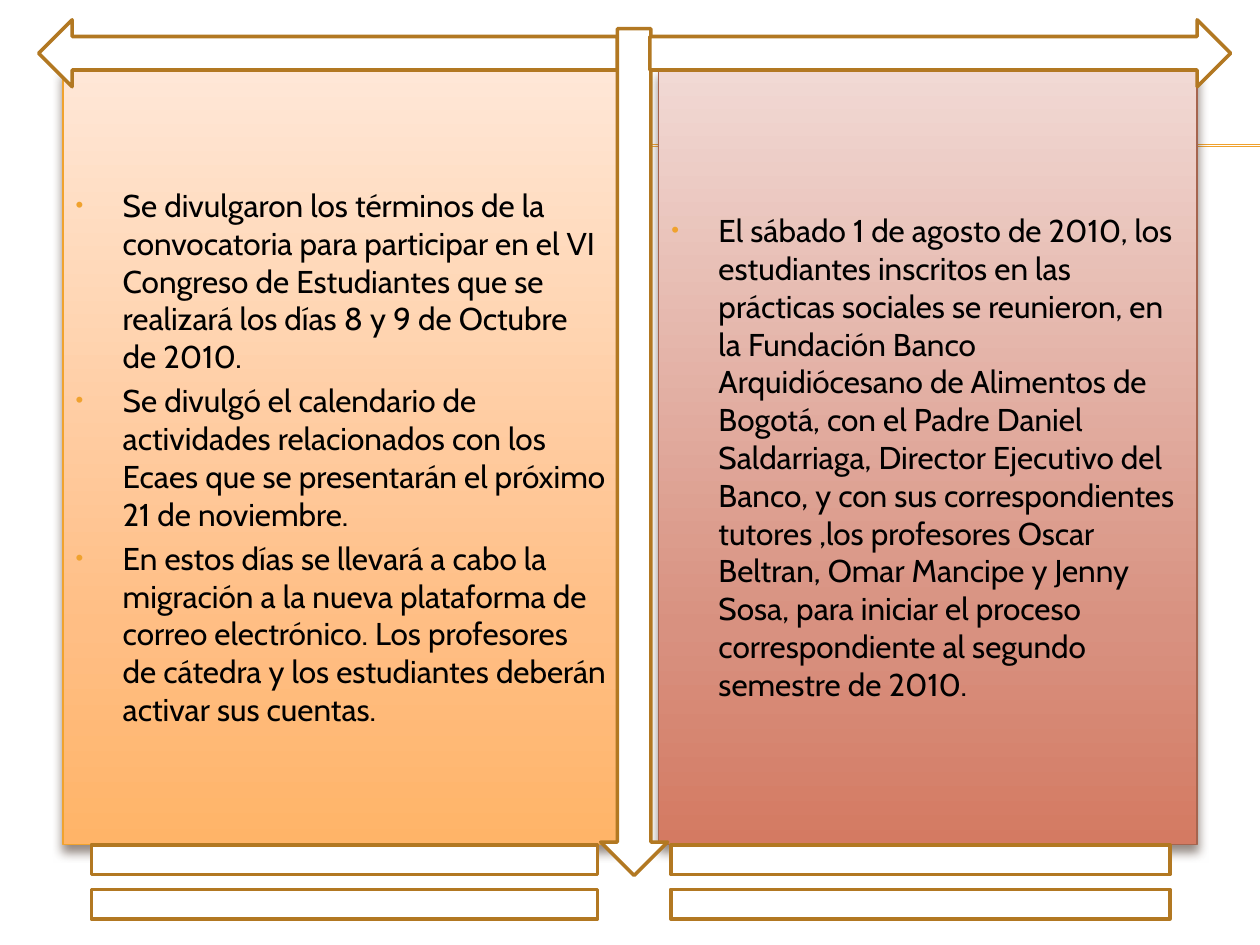
"""Build a slide with two gradient news panels framed by arrows and equal signs."""
from lxml.etree import SubElement
from pptx import Presentation
from pptx.dml.color import RGBColor
from pptx.enum.shapes import MSO_CONNECTOR as Connector, MSO_SHAPE as Shape
from pptx.enum.text import MSO_ANCHOR as Anchor, MSO_AUTO_SIZE as AutoSize, PP_ALIGN as Align
from pptx.oxml.ns import qn
from pptx.util import Cm, Pt

LEFT_NEWS = [
    "Se divulgaron los términos de la convocatoria para participar en el VI Congreso de "
    "Estudiantes que se realizará los días 8 y 9 de Octubre de 2010.",
    "Se divulgó el calendario de actividades relacionados con los Ecaes que se presentarán "
    "el próximo 21 de noviembre.",
    "En estos días se llevará a cabo la migración a la nueva plataforma de correo electrónico. "
    "Los profesores de cátedra y los estudiantes deberán activar sus cuentas.",
]
RIGHT_NEWS = [
    "El sábado 1 de agosto de 2010, los estudiantes inscritos en las prácticas sociales se "
    "reunieron, en la Fundación Banco Arquidiócesano de Alimentos de Bogotá, con el Padre "
    "Daniel Saldarriaga, Director Ejecutivo del Banco, y con sus correspondientes tutores ,los "
    "profesores Oscar Beltran, Omar Mancipe y Jenny Sosa, para iniciar el proceso "
    "correspondiente al segundo semestre de 2010.",
]


def color(value):
    return RGBColor.from_string(value)


def add_element(parent, tag, **attributes):
    return SubElement(parent, qn(tag), {name: str(value) for name, value in attributes.items()})


class NewsSlide:
    font_name = "Cabin"
    font_size = Pt(18)
    text_color = "000000"
    accent = "F0A22E"
    outline = "B27822"
    shadow = "4E3B30"
    indent = Cm(0.95)

    def __init__(self, presentation):
        self.slide = presentation.slides.add_slide(presentation.slide_layouts[3])
        title = self.slide.shapes.title.element
        title.getparent().remove(title)

    def rule(self, left, right, top):
        line = self.slide.shapes.add_connector(
            Connector.STRAIGHT, Cm(left), Cm(top), Cm(right), Cm(top))
        line.line.color.rgb = color(self.accent)
        line.line.width = Pt(0.75)
        add_element(line.element.spPr, "a:effectLst")
        line.element.getparent().insert(2, line.element)

    def panel(self, index, left, top, width, height, stops, border, items):
        body = self.slide.placeholders[index]
        body.left, body.top, body.width, body.height = map(Cm, (left, top, width, height))
        self.gradient(body, stops)
        body.line.color.rgb = color(border)
        body.line.width = Pt(0.79)
        self.drop_shadow(body)
        frame = body.text_frame
        frame.word_wrap = True
        frame.auto_size = AutoSize.NONE
        frame.vertical_anchor = Anchor.MIDDLE
        for number, item in enumerate(items):
            paragraph = frame.add_paragraph() if number else frame.paragraphs[0]
            self.bullet(paragraph, item, Pt(3.6) if number else Pt(0))

    def gradient(self, shape, stops):
        shape.fill.gradient()
        shape.fill.gradient_angle = 270
        stop_list = shape.element.spPr.find(qn("a:gradFill")).find(qn("a:gsLst"))
        for stop in list(stop_list):
            stop_list.remove(stop)
        for position, value in zip((0, 72, 100), stops):
            stop = add_element(stop_list, "a:gs", pos=position * 1000)
            add_element(stop, "a:srgbClr", val=value)

    def drop_shadow(self, shape):
        effects = add_element(shape.element.spPr, "a:effectLst")
        shadow = add_element(effects, "a:outerShdw", blurRad=Pt(6), dist=Pt(4),
                             dir=90 * 60000, rotWithShape=0)
        tint = add_element(shadow, "a:srgbClr", val=self.shadow)
        add_element(tint, "a:alpha", val=60000)

    def bullet(self, paragraph, text, space_before):
        paragraph.text = text
        paragraph.alignment = Align.LEFT
        paragraph.space_before = space_before
        properties = paragraph._p.get_or_add_pPr()
        properties.set("marL", str(self.indent))
        properties.set("indent", str(-self.indent))
        bullet_color = add_element(properties, "a:buClr")
        add_element(bullet_color, "a:srgbClr", val=self.accent)
        add_element(properties, "a:buSzPct", val=70000)
        add_element(properties, "a:buFont", typeface="Arial")
        add_element(properties, "a:buChar", char="•")
        paragraph.font.name = self.font_name
        paragraph.font.size = self.font_size
        paragraph.font.color.rgb = color(self.text_color)

    def outlined(self, kind, left, top, width, height):
        shape = self.slide.shapes.add_shape(kind, *map(Cm, (left, top, width, height)))
        shape.shadow.inherit = False
        shape.fill.solid()
        shape.fill.fore_color.rgb = color("FFFFFF")
        shape.line.color.rgb = color(self.outline)
        shape.line.width = Pt(2)


def main():
    presentation = Presentation()
    presentation.slide_width, presentation.slide_height = Cm(25.4), Cm(19.05)
    news = NewsSlide(presentation)
    for top in (2.95, 2.92):
        news.rule(1.42, 25.4, top)
    news.panel(1, 1.27, 1.4, 11.23, 15.62, ("FFE7D7", "FFBE84", "FFB468"), "F0A22E", LEFT_NEWS)
    news.panel(2, 13.28, 1.4, 10.85, 15.62, ("F1D9D4", "D89180", "D47A62"), "A5644E", RIGHT_NEWS)
    news.outlined(Shape.DOWN_ARROW, 12.11, 0.58, 1.35, 17.07)
    news.outlined(Shape.RIGHT_ARROW, 13.1, 0.4, 11.71, 1.35)
    news.outlined(Shape.LEFT_ARROW, 0.78, 0.4, 11.66, 1.35)
    news.outlined(Shape.MATH_EQUAL, 0, 16.51, 13.89, 2.54)
    news.outlined(Shape.MATH_EQUAL, 11.71, 16.51, 13.69, 2.54)
    presentation.save("out.pptx")


if __name__ == "__main__":
    main()
